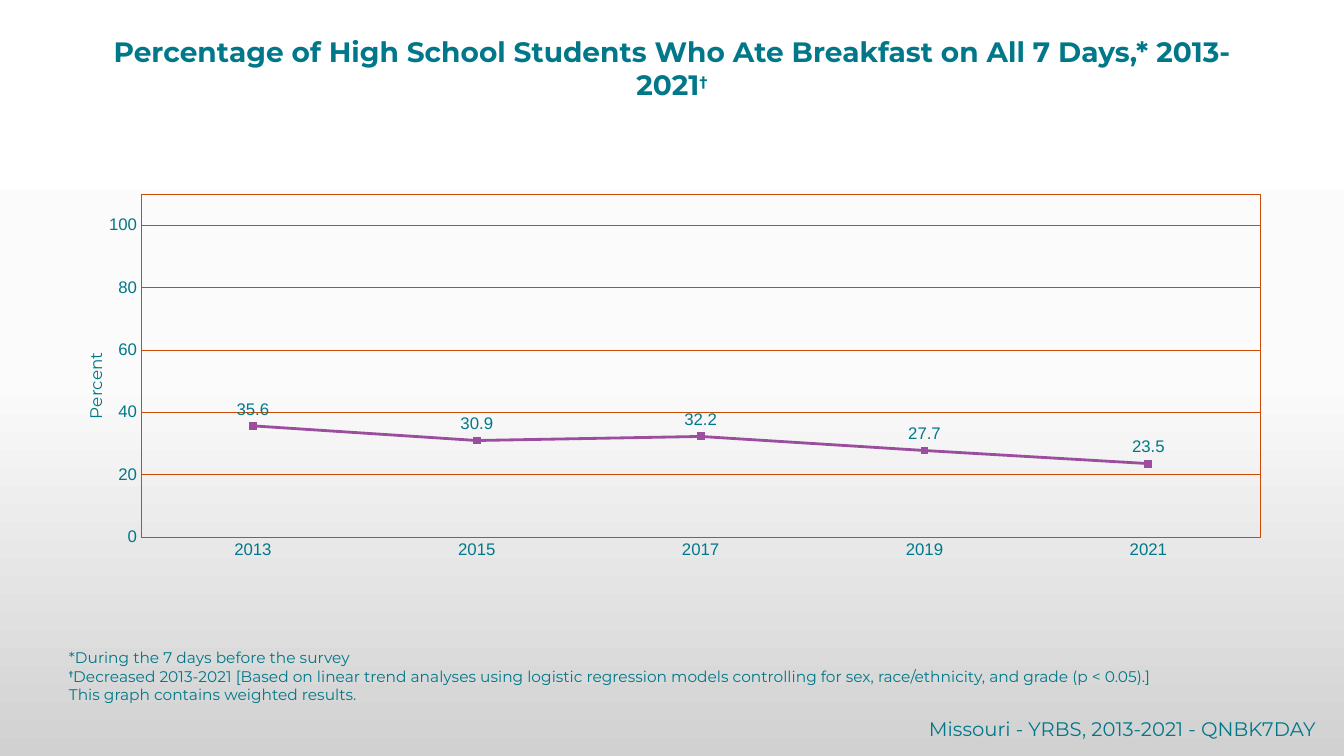
"""Build the slide on breakfast habits of high school students."""
from copy import deepcopy

from lxml import etree
from pptx import Presentation
from pptx import util as u
from pptx.chart.data import CategoryChartData
from pptx.dml.color import RGBColor
from pptx.enum import chart as kinds
from pptx.enum import text
from pptx.oxml import ns

COLORS = {"teal": "007889", "footer": "00788A", "navy": "012169", "rust": "CC4A05",
          "purple": "9B4E9E", "gold": "FFC000"}
BACKDROP = [(0, "FFFFFF"), (0.5, "FBFBFB"), (1, "D1D1D1")]
HEAD = {"size": 20, "bold": True, "name": "Montserrat", "color": "teal"}
NOTE = {"size": 11, "bold": False, "name": "Montserrat", "color": "teal"}
FOOT = {"size": 14, "bold": False, "name": "Montserrat", "color": "footer"}
LABEL = {"size": 12, "bold": False, "name": "Arial", "color": "teal"}
AXIS_TITLE = {**LABEL, "name": "Montserrat"}

TITLE = [[("Percentage of High School Students Who Ate Breakfast on All 7 Days,* 2013-2021", HEAD),
          ("†", {**HEAD, "size": 17, "baseline": 40})]]
NOTES = [
    [("*During the 7 days before the survey", NOTE)],
    [("†", {**NOTE, "size": 9, "bold": True, "baseline": 50}),
     ("Decreased 2013-2021 [Based on linear trend analyses using logistic regression models "
      "controlling for sex, race/ethnicity, and grade (p < 0.05).]", NOTE)],
    [("This graph contains weighted results.", NOTE)],
]
FOOTER = [[("Missouri - YRBS, 2013-2021 - QNBK7DAY", FOOT)]]
BREAKFAST = {"2013": 35.6, "2015": 30.9, "2017": 32.2, "2019": 27.7, "2021": 23.5}

PLACES = {"title": (84, 29, 1176, 78), "notes": (59, 680, 1192, 29),
          "chart": (57, 178, 1218, 418), "footer": (378, 712, 948, 34)}
PLOT = {"layoutTarget": "inner", "xMode": "edge", "yMode": "edge",
        "x": 0.069, "y": 0.038, "w": 0.919, "h": 0.821}
PERCENT_PLACE = {"xMode": "edge", "yMode": "edge", "x": 0.02, "y": 0.41}


def px(length):
    return u.Emu(round(length * 914400 / 100.8))


def rgb(name):
    return RGBColor.from_string(COLORS[name])


def style_font(font, style):
    for key, value in style.items():
        if key == "color":
            font.color.rgb = rgb(value)
        elif key != "baseline":
            setattr(font, key, u.Pt(value) if key == "size" else value)


def style_line(line, color, width):
    line.color.rgb = rgb(color)
    line.width = u.Pt(width)


def write(box, place, paragraphs, align, anchor):
    box.left, box.top, box.width, box.height = map(px, PLACES[place])
    frame = box.text_frame
    settings = {"word_wrap": True, "auto_size": text.MSO_AUTO_SIZE.SHAPE_TO_FIT_TEXT,
                "vertical_anchor": anchor, "margin_left": u.Inches(0.1),
                "margin_right": u.Inches(0.1), "margin_top": u.Inches(0.05),
                "margin_bottom": u.Inches(0.05)}
    for key, value in settings.items():
        setattr(frame, key, value)
    for index, spans in enumerate(paragraphs):
        para = frame.add_paragraph() if index else frame.paragraphs[0]
        para.alignment = align
        for words, style in spans:
            span = para.add_run()
            span.text = words
            style_font(span.font, style)
            if "baseline" in style:
                span.font._element.set("baseline", str(style["baseline"] * 1000))


def set_layout(parent, index, values):
    for old in parent.findall(ns.qn("c:layout")):
        parent.remove(old)
    layout = etree.Element(ns.qn("c:layout"))
    manual = etree.SubElement(layout, ns.qn("c:manualLayout"))
    for key, value in values.items():
        etree.SubElement(manual, ns.qn("c:" + key)).set("val", str(value))
    parent.insert(index, layout)


def paint_background(page):
    fill = page.background.fill
    fill.gradient()
    fill.gradient_angle = 270
    stops = page.element.find(".//" + ns.qn("a:gsLst"))
    stops.append(deepcopy(stops[0]))
    for stop, (position, color) in zip(fill.gradient_stops, BACKDROP):
        stop.position = position
        stop.color.rgb = RGBColor.from_string(color)


def add_breakfast_chart(page):
    data = CategoryChartData()
    data.categories = list(BREAKFAST)
    data.add_series("Series 1", list(BREAKFAST.values()))
    chart = page.shapes.add_chart(kinds.XL_CHART_TYPE.LINE_MARKERS,
                                  *map(px, PLACES["chart"]), data).chart
    chart.has_title = chart.has_legend = False
    style_font(chart.font, {"size": 18, "name": "Montserrat", "color": "navy"})

    percent = chart.value_axis
    for axis in (chart.category_axis, percent):
        axis.major_tick_mark = axis.minor_tick_mark = kinds.XL_TICK_MARK.NONE
        style_font(axis.tick_labels.font, LABEL)
        style_line(axis.format.line, "rust", 0.25)
    percent.minimum_scale, percent.maximum_scale, percent.major_unit = 0, 110, 20
    percent.tick_labels.number_format = "#,##0"
    percent.tick_labels.number_format_is_linked = False
    percent.has_major_gridlines = True
    style_line(percent.major_gridlines.format.line, "rust", 0.25)
    para = percent.axis_title.text_frame.paragraphs[0]
    span = para.add_run()
    span.text = "Percent"
    style_font(span.font, AXIS_TITLE)
    set_layout(percent.axis_title._element, 1, PERCENT_PLACE)

    plot = chart.plots[0]
    plot.vary_by_categories = False
    series = plot.series[0]
    series.smooth = False
    style_line(series.format.line, "purple", 2)
    series.marker.style = kinds.XL_MARKER_STYLE.SQUARE
    series.marker.size = 5
    series.marker.format.fill.solid()
    series.marker.format.fill.fore_color.rgb = rgb("gold")
    style_line(series.marker.format.line, "purple", 0.75)
    labels = series.data_labels
    labels.show_value = True
    labels.position = kinds.XL_LABEL_POSITION.ABOVE
    labels.number_format = "#,##0.0"
    labels.number_format_is_linked = False
    style_font(labels.font, LABEL)

    area = chart.element.find(".//" + ns.qn("c:plotArea"))
    set_layout(area, 0, PLOT)
    frame = etree.SubElement(area, ns.qn("c:spPr"))
    etree.SubElement(frame, ns.qn("a:noFill"))
    border = etree.SubElement(frame, ns.qn("a:ln"), w=str(u.Pt(0.25)))
    solid = etree.SubElement(border, ns.qn("a:solidFill"))
    etree.SubElement(solid, ns.qn("a:srgbClr"), val=COLORS["rust"])


def main():
    deck = Presentation()
    deck.slide_width, deck.slide_height = px(1344), px(756)
    page = deck.slides.add_slide(deck.slide_layouts[5])
    paint_background(page)
    align, anchor = text.PP_ALIGN, text.MSO_ANCHOR
    write(page.shapes.title, "title", TITLE, align.CENTER, anchor.TOP)
    for place, paragraphs, side, end in (("notes", NOTES, align.LEFT, anchor.BOTTOM),
                                         ("footer", FOOTER, align.RIGHT, anchor.TOP)):
        box = page.shapes.add_textbox(*map(px, PLACES[place]))
        write(box, place, paragraphs, side, end)
    add_breakfast_chart(page)
    deck.save("out.pptx")


if __name__ == "__main__":
    main()
